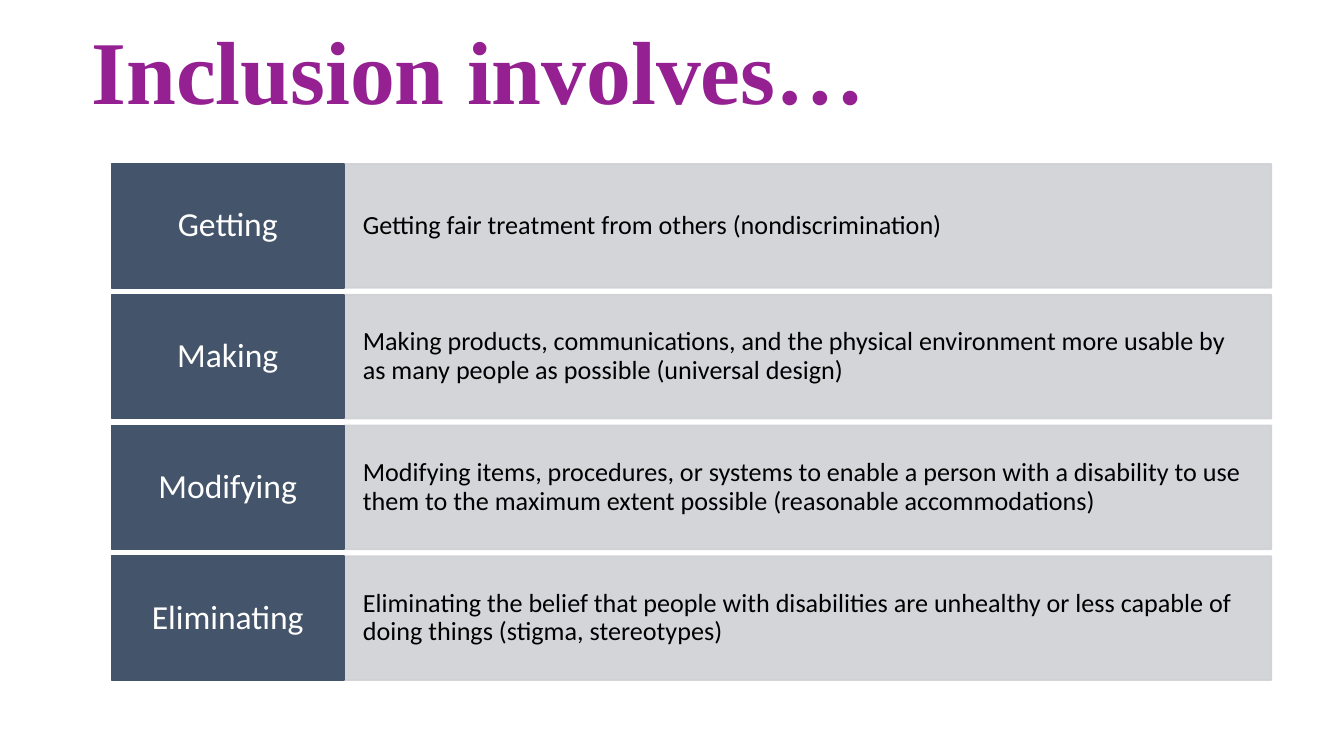
from dataclasses import dataclass

from lxml import etree
from pptx import Presentation
from pptx import util as u
from pptx.dml.color import RGBColor
from pptx.enum import shapes, text
from pptx.oxml.ns import qn


@dataclass(frozen=True)
class Theme:
    title_font: str = "Times New Roman"
    body_font: str = "Calibri"
    title_color: str = "942092"
    label_fill: str = "44546A"
    label_color: str = "FFFFFF"
    detail_fill: str = "CFD1D4"
    detail_color: str = "000000"
    title_size: int = 48
    label_size: int = 18
    detail_size: int = 14


def write(tf, content, *, font, size, color, bold=False,
          align=text.PP_ALIGN.LEFT, insets=(0.1, 0.05)):
    """Fill a text frame with one formatted paragraph."""
    tf.word_wrap = True
    tf.auto_size = text.MSO_AUTO_SIZE.NONE
    tf.vertical_anchor = text.MSO_ANCHOR.MIDDLE
    tf.margin_left = tf.margin_right = u.Inches(insets[0])
    tf.margin_top = tf.margin_bottom = u.Inches(insets[1])
    p = tf.paragraphs[0]
    p.alignment = align
    p.line_spacing = 0.9
    r = p.add_run()
    r.text = content
    r.font.name = font
    r.font.size = u.Pt(size)
    r.font.bold = bold
    r.font.color.rgb = RGBColor.from_string(color)


class SlideBuilder:
    def __init__(self, s, theme):
        self.s = s
        self.theme = theme

    def title(self, content, left, top, width, height):
        sp = self.s.shapes.title
        sp.left, sp.top = u.Inches(left), u.Inches(top)
        sp.width, sp.height = u.Inches(width), u.Inches(height)
        t = self.theme
        write(sp.text_frame, content, font=t.title_font, size=t.title_size,
              color=t.title_color, bold=True)

    def box(self, left, top, width, height, color, opacity=100):
        sp = self.s.shapes.add_shape(
            shapes.MSO_SHAPE.RECTANGLE, u.Inches(left), u.Inches(top),
            u.Inches(width), u.Inches(height))
        sp.shadow.inherit = False
        sp.line.width = u.Pt(1)
        for fill in (sp.fill, sp.line.fill):
            fill.solid()
            fill.fore_color.rgb = RGBColor.from_string(color)
        if opacity < 100:
            for clr in sp.element.spPr.iter(qn("a:srgbClr")):
                etree.SubElement(clr, qn("a:alpha"), val=str(opacity * 1000))
        return sp

    def label(self, content, *place):
        t = self.theme
        sp = self.box(*place, t.label_fill)
        write(sp.text_frame, content, font=t.body_font, size=t.label_size,
              color=t.label_color, align=text.PP_ALIGN.CENTER,
              insets=(0.09, 0.09))

    def detail(self, content, *place):
        t = self.theme
        sp = self.box(*place, t.detail_fill, opacity=90)
        write(sp.text_frame, content, font=t.body_font, size=t.detail_size,
              color=t.detail_color, insets=(0.14, 0.23))


ROWS = [
    ("Getting", "Getting fair treatment from others (nondiscrimination)"),
    ("Making", "Making products, communications, and the physical environment "
               "more usable by as many people as possible (universal design)"),
    ("Modifying", "Modifying items, procedures, or systems to enable a person "
                  "with a disability to use them to the maximum extent "
                  "possible (reasonable accommodations)"),
    ("Eliminating", "Eliminating the belief that people with disabilities are "
                    "unhealthy or less capable of doing things "
                    "(stigma, stereotypes)"),
]


def main():
    # Widescreen slide, 16:9
    prs = Presentation()
    prs.slide_width = u.Inches(10)
    prs.slide_height = u.Inches(10 * 9 / 16)
    title_only = prs.slide_layouts[5]
    slide = SlideBuilder(prs.slides.add_slide(title_only), Theme())

    # Title
    slide.title("Inclusion involves…", 0.58, 0.14, 9.42, 0.85)

    # Rows: an action label beside its explanation, evenly spread
    left, first_top, last_top, height = 0.83, 1.22, 4.14, 0.92
    label_width, detail_width = 1.73, 6.9
    pitch = (last_top - first_top) / (len(ROWS) - 1)
    for i, (action, explanation) in enumerate(ROWS):
        top = first_top + i * pitch
        slide.detail(explanation, left + label_width, top, detail_width, height)
        slide.label(action, left, top, label_width, height)

    prs.save("out.pptx")


if __name__ == "__main__":
    main()
